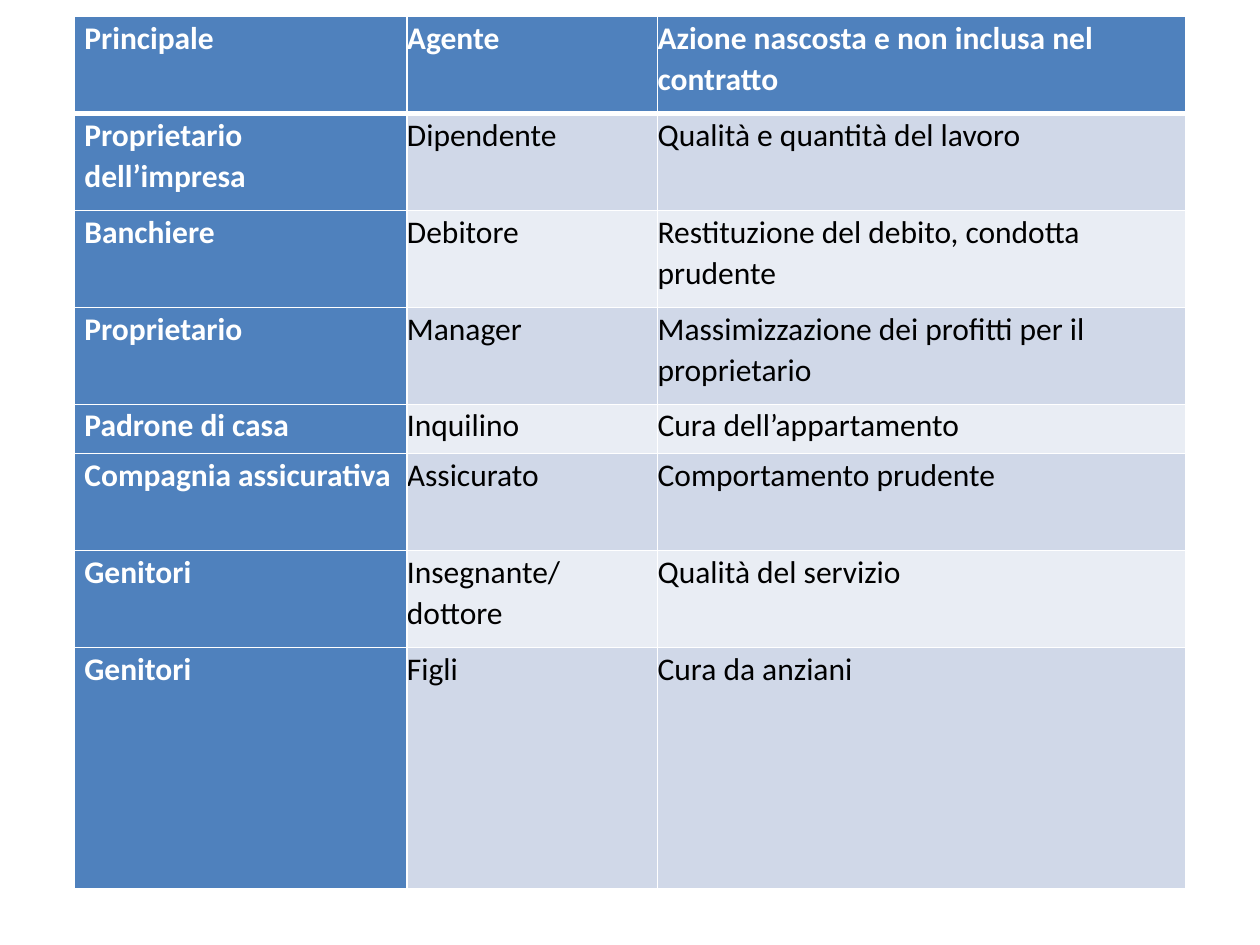
from lxml.etree import SubElement
from pptx import Presentation
from pptx.dml.color import RGBColor
from pptx.oxml.ns import qn
from pptx.util import Inches, Pt

BLUE, WHITE, BLACK = "4F81BD", "FFFFFF", "000000"
BANDS = ["D0D8E8", "E9EDF4"]
COLUMN_SHARES = [2.64, 1.99, 4.19]
ROW_SHARES = [0.77, 0.77, 0.77, 0.77, 0.39, 0.77, 0.77, 1.92]
ROWS = [
    ("Principale", "Agente", "Azione nascosta e non inclusa nel contratto"),
    ("Proprietario dell’impresa", "Dipendente", "Qualità e quantità del lavoro"),
    ("Banchiere", "Debitore", "Restituzione del debito, condotta prudente"),
    ("Proprietario", "Manager", "Massimizzazione dei profitti per il proprietario"),
    ("Padrone di casa", "Inquilino", "Cura dell’appartamento"),
    ("Compagnia assicurativa", "Assicurato", "Comportamento prudente"),
    ("Genitori", "Insegnante/dottore", "Qualità del servizio"),
    ("Genitori", "Figli", "Cura da anziani"),
]


def color(value):
    return RGBColor.from_string(value)


def set_borders(cell, widths):
    """Draw white lines on the left, right, top and bottom of a cell."""
    properties = cell._tc.get_or_add_tcPr()
    for index, (side, width) in enumerate(zip("LRTB", widths)):
        line = SubElement(properties, qn(f"a:ln{side}"), w=str(Pt(width)))
        fill = SubElement(line, qn("a:solidFill"))
        SubElement(fill, qn("a:srgbClr"), val=WHITE)
        # Borders come before the fill in the cell properties
        properties.insert(index, line)


def format_cell(cell, text, row, column):
    heading = row == 0 or column == 0
    cell.fill.solid()
    cell.fill.fore_color.rgb = color(BLUE if heading else BANDS[(row - 1) % 2])
    cell.margin_left = cell.margin_top = cell.margin_bottom = 0
    cell.margin_right = Inches(0.08)
    set_borders(cell, (1, 1, 3 if row == 1 else 1, 3 if row == 0 else 1))

    cell.text = text
    para = cell.text_frame.paragraphs[0]
    para.line_spacing = 1.07
    if column == 0:
        para._p.get_or_add_pPr().set("marL", str(Inches(0.08)))
    para.font.name = "Calibri"
    para.font.size = Pt(18)
    para.font.bold = heading
    para.font.color.rgb = color(WHITE if heading else BLACK)


def add_agency_table(page, left, top, width, height):
    table = page.shapes.add_table(
        len(ROWS), len(COLUMN_SHARES), left, top, width, height).table
    table.horz_banding = False
    for column, share in zip(table.columns, COLUMN_SHARES):
        column.width = int(width * share / sum(COLUMN_SHARES))
    for row, share in zip(table.rows, ROW_SHARES):
        row.height = int(height * share / sum(ROW_SHARES))
    for row, texts in enumerate(ROWS):
        for column, text in enumerate(texts):
            format_cell(table.cell(row, column), text, row, column)


def main():
    deck = Presentation()
    deck.slide_width, deck.slide_height = Inches(10), Inches(7.5)
    page = deck.slides.add_slide(deck.slide_layouts[6])
    # Principals, agents and hidden actions
    add_agency_table(page, Inches(0.59), Inches(0.13), Inches(8.82), Inches(6.93))
    deck.save("out.pptx")


if __name__ == "__main__":
    main()
